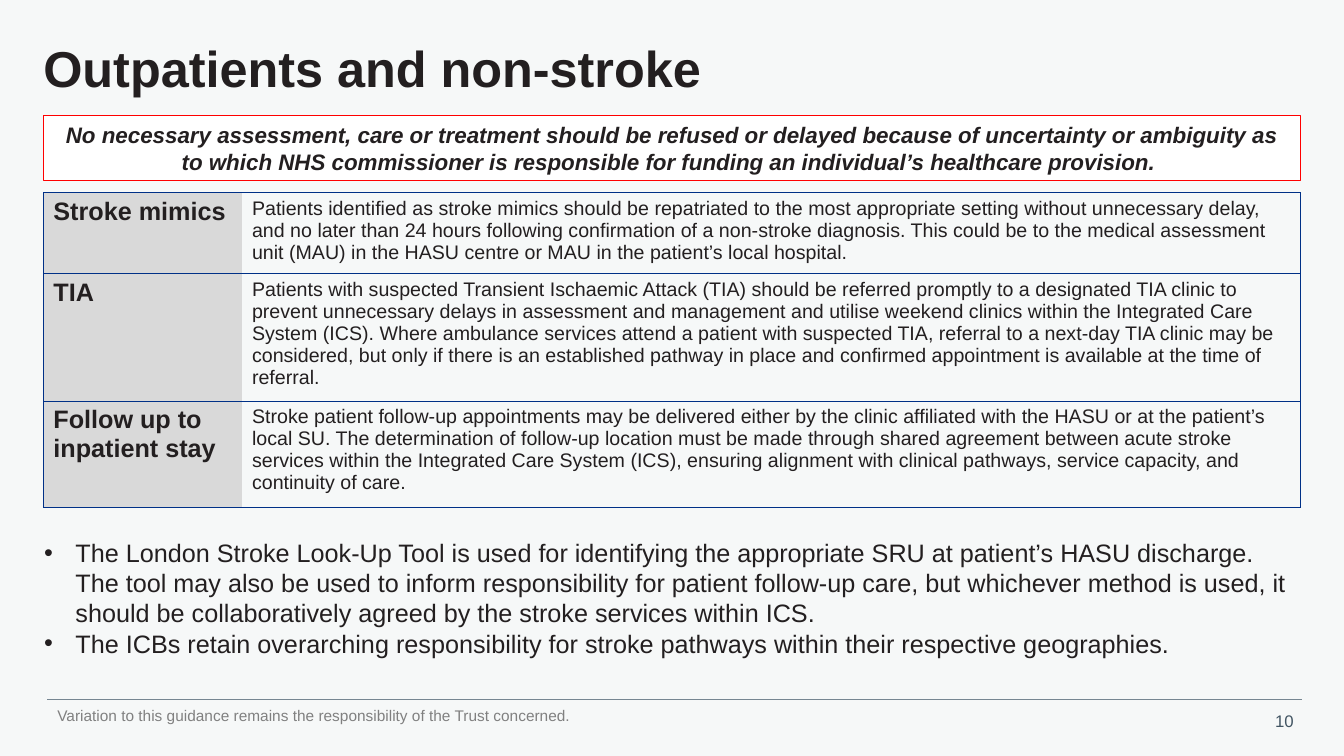
import pptx
import pptx.dml.color
import pptx.enum.shapes
import pptx.enum.text
import pptx.util
from dataclasses import dataclass
from lxml import etree
from pptx.oxml.ns import qn

EMU_PER_PX = 9144
ALIGN = pptx.enum.text.PP_ALIGN
ANCHOR = pptx.enum.text.MSO_ANCHOR


@dataclass(frozen=True)
class Theme:
    font: str = "Arial"
    page: str = "F6F8F8"
    ink: str = "231F20"
    muted: str = "808080"
    number: str = "425563"
    rule: str = "768692"
    border: str = "003087"
    label_fill: str = "D9D9D9"
    callout_fill: str = "FFFFFF"
    callout_line: str = "FF0000"
    title_size: int = 36
    large_size: int = 18
    callout_size: int = 16
    body_size: int = 14
    number_size: int = 12
    footer_size: int = 11


THEME = Theme()

CALLOUT = (
    "No necessary assessment, care or treatment should be refused or delayed because of "
    "uncertainty or ambiguity as to which NHS commissioner is responsible for funding an "
    "individual’s healthcare provision. "
)
GUIDANCE = [
    (75, "Stroke mimics",
     "Patients identified as stroke mimics should be repatriated to the most appropriate setting "
     "without unnecessary delay, and no later than 24 hours following confirmation of a non-stroke "
     "diagnosis. This could be to the medical assessment unit (MAU) in the HASU centre or MAU in "
     "the patient’s local hospital."),
    (119, "TIA",
     "Patients with suspected Transient Ischaemic Attack (TIA) should be referred promptly to a "
     "designated TIA clinic to prevent unnecessary delays in assessment and management and utilise "
     "weekend clinics within the Integrated Care System (ICS). Where ambulance services attend a "
     "patient with suspected TIA, referral to a next-day TIA clinic may be considered, but only if "
     "there is an established pathway in place and confirmed appointment is available at the time "
     "of referral."),
    (105, "Follow up to inpatient stay",
     "Stroke patient follow-up appointments may be delivered either by the clinic affiliated with "
     "the HASU or at the patient’s local SU. The determination of follow-up location must be made "
     "through shared agreement between acute stroke services within the Integrated Care System "
     "(ICS), ensuring alignment with clinical pathways, service capacity, and continuity of care."),
]
BULLETS = [
    "The London Stroke Look-Up Tool is used for identifying the appropriate SRU at patient’s HASU "
    "discharge. The tool may also be used to inform responsibility for patient follow-up care, but "
    "whichever method is used, it should be collaboratively agreed by the stroke services within ICS.",
    "The ICBs retain overarching responsibility for stroke pathways within their respective "
    "geographies.",
]


def px(length):
    return pptx.util.Emu(length * EMU_PER_PX)


def rgb(value):
    return pptx.dml.color.RGBColor.from_string(value)


def add_run(para, text, size, color=THEME.ink, bold=False, italic=False):
    span = para.add_run()
    span.text = text
    span.font.name = THEME.font
    span.font.size = pptx.util.Pt(size)
    span.font.color.rgb = rgb(color)
    span.font.bold = bold
    span.font.italic = italic


def add_text_box(page, left, top, width, height, wrap=True):
    box = page.shapes.add_textbox(px(left), px(top), px(width), px(height))
    box.text_frame.word_wrap = wrap
    return box.text_frame


def add_title(page, text):
    frame = add_text_box(page, 43, 23, 1247, 95)
    frame.margin_left = frame.margin_right = frame.margin_top = frame.margin_bottom = 0
    frame.vertical_anchor = ANCHOR.MIDDLE
    para = frame.paragraphs[0]
    para.line_spacing = 0.9
    add_run(para, text, THEME.title_size, bold=True)


def add_callout(page, text):
    box = page.shapes.add_shape(
        pptx.enum.shapes.MSO_SHAPE.RECTANGLE, px(43), px(115), px(1247), px(64))
    box.shadow.inherit = False
    box.fill.solid()
    box.fill.fore_color.rgb = rgb(THEME.callout_fill)
    box.line.color.rgb = rgb(THEME.callout_line)
    box.line.width = pptx.util.Pt(0.75)
    frame = box.text_frame
    frame.word_wrap = True
    frame.vertical_anchor = ANCHOR.TOP
    para = frame.paragraphs[0]
    para.alignment = ALIGN.CENTER
    add_run(para, text, THEME.callout_size, bold=True, italic=True)


def set_borders(cell, visible_sides):
    properties = cell._tc.get_or_add_tcPr()
    for side in "LRTB":
        line = etree.SubElement(properties, qn(f"a:ln{side}"), w=str(pptx.util.Pt(0.5)))
        if side in visible_sides:
            fill = etree.SubElement(line, qn("a:solidFill"))
            etree.SubElement(fill, qn("a:srgbClr"), val=THEME.border)
        else:
            etree.SubElement(line, qn("a:noFill"))


def add_guidance_table(page, rows):
    height = sum(row[0] for row in rows)
    table = page.shapes.add_table(len(rows), 2, px(43), px(191), px(1247), px(height)).table
    table.first_row = False
    table.horz_banding = False
    for column, width in zip(table.columns, (197, 1050)):
        column.width = px(width)
    for index, (row_height, label, detail) in enumerate(rows):
        table.rows[index].height = px(row_height)
        label_cell, detail_cell = table.cell(index, 0), table.cell(index, 1)
        set_borders(label_cell, "LTB")
        set_borders(detail_cell, "RTB")
        label_cell.fill.solid()
        label_cell.fill.fore_color.rgb = rgb(THEME.label_fill)
        detail_cell.fill.background()
        add_run(label_cell.text_frame.paragraphs[0], label, THEME.large_size, bold=True)
        add_run(detail_cell.text_frame.paragraphs[0], detail, THEME.body_size)


def add_bullets(page, items):
    frame = add_text_box(page, 34, 528, 1265, 131)
    for index, text in enumerate(items):
        para = frame.add_paragraph() if index else frame.paragraphs[0]
        properties = para._p.get_or_add_pPr()
        properties.set("marL", str(px(31)))
        properties.set("indent", str(px(-31)))
        etree.SubElement(properties, qn("a:buFont"), typeface=THEME.font)
        etree.SubElement(properties, qn("a:buChar"), char="•")
        add_run(para, text, THEME.large_size)


def add_rule(page):
    rule = page.shapes.add_connector(
        pptx.enum.shapes.MSO_CONNECTOR.STRAIGHT, px(47), px(694), px(1291), px(694))
    rule.line.color.rgb = rgb(THEME.rule)
    rule.line.width = pptx.util.Pt(0.5)
    etree.SubElement(rule._element.spPr, qn("a:effectLst"))


def add_footer(page, note, number):
    add_rule(page)
    note_para = add_text_box(page, 47, 696, 1201, 29).paragraphs[0]
    add_run(note_para, note, THEME.footer_size, THEME.muted)
    number_para = add_text_box(page, 1252, 700, 41, 30, wrap=False).paragraphs[0]
    number_para.alignment = ALIGN.RIGHT
    add_run(number_para, number, THEME.number_size, THEME.number)


def main():
    deck = pptx.Presentation()
    deck.slide_width = px(1333)
    deck.slide_height = px(750)
    page = deck.slides.add_slide(deck.slide_layouts[6])
    page.background.fill.solid()
    page.background.fill.fore_color.rgb = rgb(THEME.page)
    add_title(page, "Outpatients and non-stroke")
    add_guidance_table(page, GUIDANCE)
    add_callout(page, CALLOUT)
    add_bullets(page, BULLETS)
    add_footer(
        page, "Variation to this guidance remains the responsibility of the Trust concerned.", "10")
    deck.save("out.pptx")


if __name__ == "__main__":
    main()
